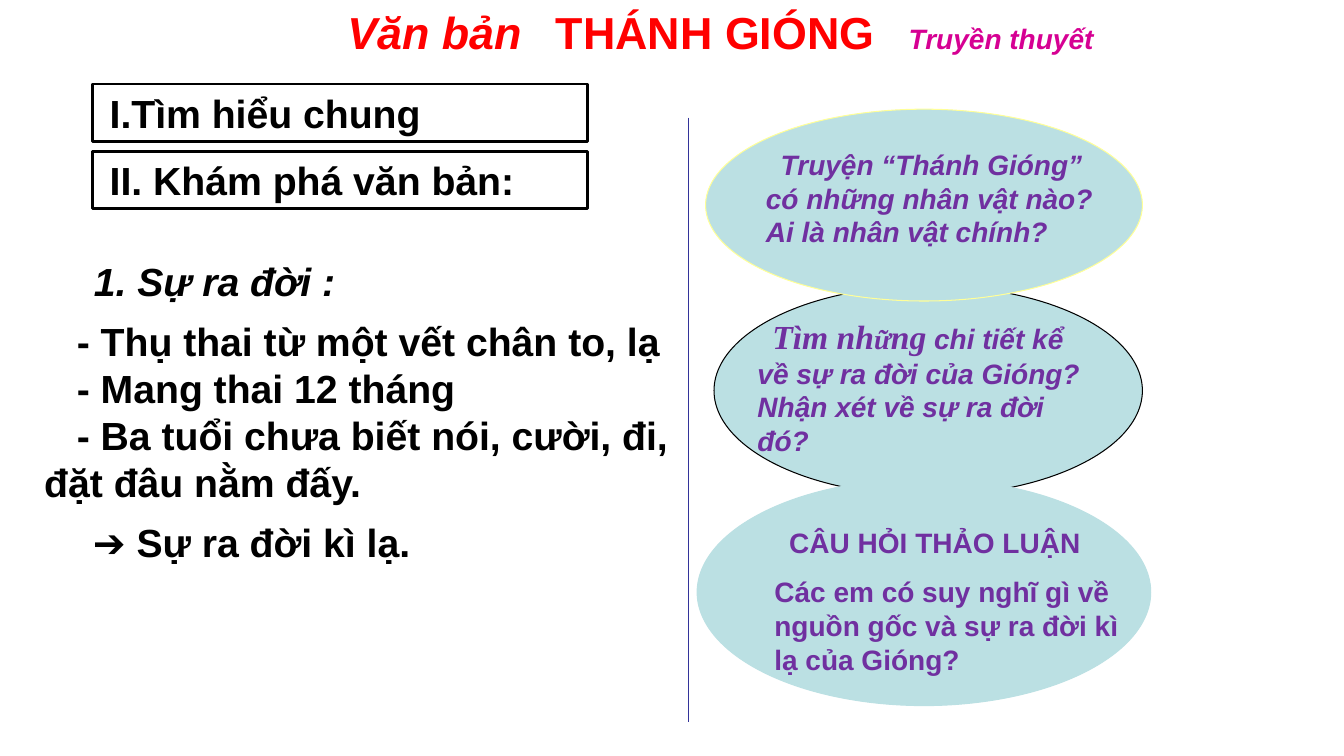
"""Builds the lesson slide on the legend Thánh Gióng."""
from lxml import etree
from pptx import Presentation
from pptx.dml.color import RGBColor
from pptx.enum import shapes, text
from pptx.oxml import ns
from pptx.util import Pt

HUES = {"black": "000000", "white": "FFFFFF", "red": "FF0000", "pink": "D60093",
        "purple": "7030A0", "teal": "BBE0E3", "yellow": "FFFF99", "navy": "333399"}

HEAD = (28, "black", "b")
ASK = (20, "purple", "bi")
TALK = (20, "purple", "b")
SERIF = "Times New Roman"

RULE = (492, 84, 492, 516)
OVALS = [
    ((510, 204, 306, 150), "black"),
    ((498, 342, 324, 162), "teal"),
    ((504, 78, 312, 137), "yellow"),
]
BARS = [
    ((66, 60, 354, 41), [(5.3, [("I.Tìm hiểu chung", *HEAD)])]),
    ((66, 108, 354, 41), [(5.3, [("II. Khám phá văn bản:", *HEAD)])]),
]
STOPS = [245, 509.5]
TITLE = [(67, [("Văn bản\t", 32, "red", "bi"), ("THÁNH GIÓNG\t", 32, "red", "b"),
               ("Truyền thuyết", 20, "pink", "bi")])]
FACTS = ["- Thụ thai từ một vết chân to, lạ", "- Mang thai 12 tháng",
         "- Ba tuổi chưa biết nói, cười, đi, đặt đâu nằm đấy."]
NOTES = [
    ((174, 0, 666, 46), TITLE, 0),
    ((60, 180, 197, 41), [(0, [("1. Sự ra đời :", 28, "black", "bi")])], 0),
    ((24.5, 223, 467, 143), [(23.3, [(fact, *HEAD)]) for fact in FACTS], 0),
    ((54, 367, 255, 41), [(5.3, [("➔ Sự ra đời kì lạ.", *HEAD)])], 0),
    ((540, 102, 252, 79),
     [(10.6, [("Truyện “Thánh Gióng” có những nhân vật nào? Ai là nhân vật chính?", *ASK)])], 0),
    ((534, 222, 252, 108),
     [(10.6, [("Tìm nh", 24, "purple", "bi", SERIF), ("ữ", 20, "purple", "bi", SERIF),
              ("ng", 24, "purple", "bi", SERIF),
              (" chi tiết kể về sự ra đời của Gióng? Nhận xét về sự ra đời đó?", *ASK)])], 0),
    ((546, 372, 270, 115),
     [(10.6, [("CÂU HỎI THẢO LUẬN", *TALK)]),
      (0, [("Các em có suy nghĩ gì về nguồn gốc và sự ra đời kì lạ của Gióng?", *TALK)])], 11),
]


def hue(name):
    return RGBColor.from_string(HUES[name])


def write(shape, paras, gap=0):
    frame = shape.text_frame
    frame.word_wrap = True
    frame.vertical_anchor = text.MSO_ANCHOR.TOP
    for i, (indent, runs) in enumerate(paras):
        para = frame.add_paragraph() if i else frame.paragraphs[0]
        para.alignment = text.PP_ALIGN.LEFT
        para.space_before = Pt(gap if i else 0)
        props = para._p.get_or_add_pPr()
        props.set("marL", "0")
        props.set("indent", str(Pt(indent)))
        for words, size, tint, style, *face in runs:
            run = para.add_run()
            run.text = words
            font = run.font
            font.name = face[0] if face else "Arial"
            font.size = Pt(size)
            font.bold, font.italic = "b" in style, "i" in style
            font.color.rgb = hue(tint)


def draw(slide, kind, box, fill, edge, width):
    shape = slide.shapes.add_shape(kind, *map(Pt, box))
    shape.shadow.inherit = False
    shape.fill.solid()
    shape.fill.fore_color.rgb = hue(fill)
    shape.line.color.rgb = hue(edge)
    shape.line.width = Pt(width)
    return shape


def main():
    deck = Presentation()
    deck.slide_width, deck.slide_height = Pt(960), Pt(540)
    slide = deck.slides.add_slide(deck.slide_layouts[6])

    rule = slide.shapes.add_connector(shapes.MSO_CONNECTOR.STRAIGHT, *map(Pt, RULE))
    rule.line.color.rgb = hue("navy")
    rule.line.width = Pt(0.75)
    etree.SubElement(rule._element.spPr, ns.qn("a:effectLst"))

    for box, edge in OVALS:
        draw(slide, shapes.MSO_SHAPE.OVAL, box, "teal", edge, 0.75)
    for box, paras in BARS:
        write(draw(slide, shapes.MSO_SHAPE.RECTANGLE, box, "white", "black", 2), paras)
    for box, paras, gap in NOTES:
        note = slide.shapes.add_textbox(*map(Pt, box))
        write(note, paras, gap)
        if paras is TITLE:
            props = note.text_frame.paragraphs[0]._p.get_or_add_pPr()
            tabs = etree.SubElement(props, ns.qn("a:tabLst"))
            for stop in STOPS:
                etree.SubElement(tabs, ns.qn("a:tab"), pos=str(Pt(stop)), algn="l")
    deck.save("out.pptx")


if __name__ == "__main__":
    main()
